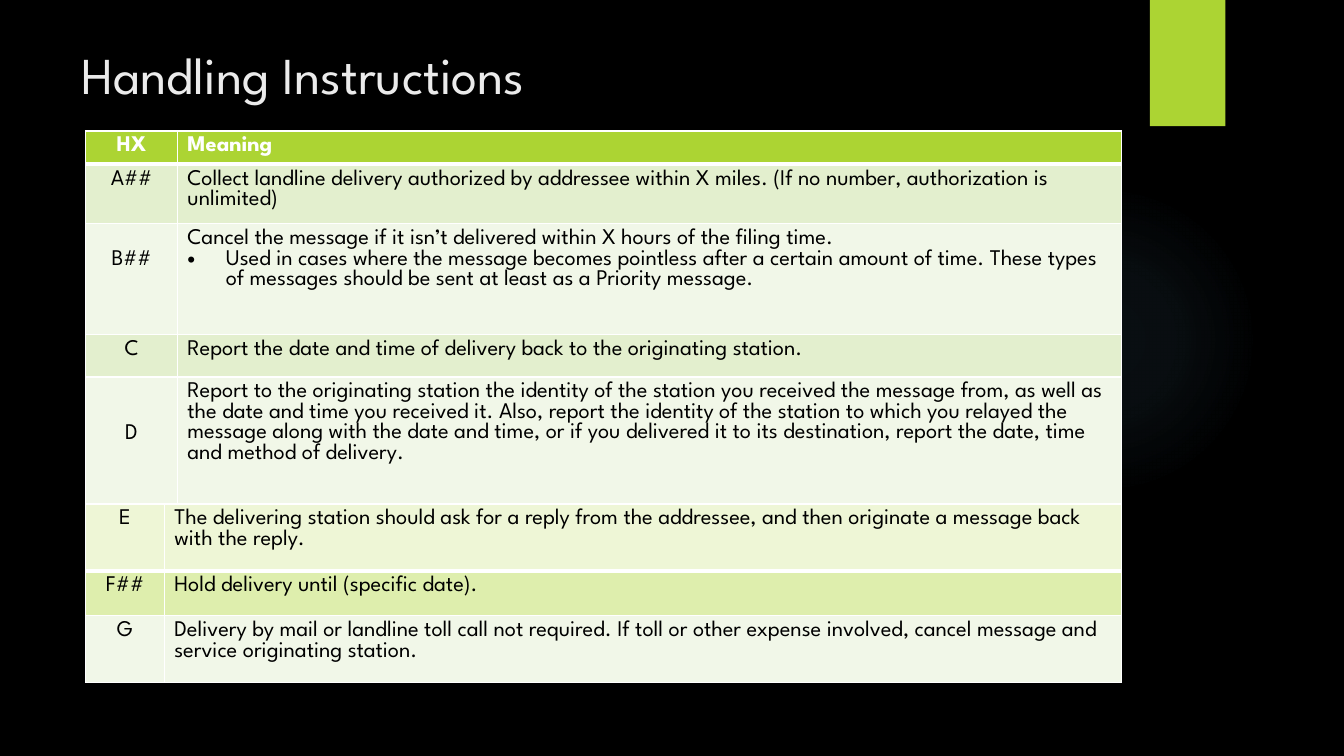
"""Build the Handling Instructions slide: a title, two code tables and green accents."""
from lxml import etree
from pptx import Presentation
from pptx.dml.color import RGBColor
from pptx.enum.shapes import MSO_SHAPE
from pptx.enum.text import MSO_ANCHOR, MSO_AUTO_SIZE, PP_ALIGN
from pptx.oxml import parse_xml
from pptx.oxml.ns import qn
from pptx.util import Cm, Pt

OVAL, RECTANGLE = MSO_SHAPE.OVAL, MSO_SHAPE.RECTANGLE
BOTTOM, NO_FIT = MSO_ANCHOR.BOTTOM, MSO_AUTO_SIZE.NONE
LEFT, CENTER = PP_ALIGN.LEFT, PP_ALIGN.CENTER
DRAWING_NS = "http://schemas.openxmlformats.org/drawingml/2006/main"

THEME = {
    "background": "000000", "accent": "ACD433", "glow": "7AC4F0", "border": "FFFFFF",
    "sage": "E3EFCE", "mist": "F1F7E8", "lemon": "EEF6D6", "lime": "DEEEAD",
    "title": {"name": "League Spartan", "size": Pt(37), "bold": False, "color": "EBEBEB"},
    "header": {"name": "League Spartan", "size": Pt(16), "bold": True, "color": "FFFFFF"},
    "body": {"name": "League Spartan", "size": Pt(16), "bold": False, "color": "000000"},
}
MARGIN_TOP, LINE_HEIGHT, BULLET_INDENT = 0.13, 0.52, 0.97

TABLES = [
    {"top": 3.3, "widths": (2.31, 23.8), "rows": [
        ("HX", ["Meaning"], "accent", 0.84, 0),
        ("A##", ["Collect landline delivery authorized by addressee within X miles. "
                 "(If no number, authorization is unlimited)"], "sage", 1.5, 0),
        ("B##", ["Cancel the message if it isn’t delivered within X hours of the filing time.",
                 "Used in cases where the message becomes pointless after a certain amount of time. "
                 "These types of messages should be sent at least as a Priority message."],
         "mist", 2.79, 1),
        ("C", ["Report the date and time of delivery back to the originating station."],
         "sage", 1.07, 0),
        ("D", ["Report to the originating station the identity of the station you received the "
               "message from, as well as the date and time you received it. Also, report the "
               "identity of the station to which you relayed the message along with the date and "
               "time, or if you delivered it to its destination, report the date, time and method "
               "of delivery."], "mist", 3.43, 2),
    ]},
    {"top": 12.7, "widths": (1.98, 24.13), "rows": [
        ("E", ["The delivering station should ask for a reply from the addressee, and then "
               "originate a message back with the reply."], "lemon", 1.68, 0),
        ("F##", ["Hold delivery until (specific date)."], "lime", 1.14, 0),
        ("G", ["Delivery by mail or landline toll call not required. If toll or other expense "
               "involved, cancel message and service originating station."], "mist", 1.68, 0),
    ]},
]


def write_paragraph(para, text, style, align):
    """Write one run and apply its format values."""
    para.alignment = align
    span = para.add_run()
    span.text = text
    for name, value in THEME[style].items():
        if name == "color":
            span.font.color.rgb = RGBColor.from_string(value)
        else:
            setattr(span.font, name, value)


def add_accent(page, kind, left, top, width, height):
    """Add a shape without line or shadow."""
    shape = page.shapes.add_shape(kind, Cm(left), Cm(top), Cm(width), Cm(height))
    shape.shadow.inherit = False
    shape.line.fill.background()
    return shape


deck = Presentation()
deck.slide_width, deck.slide_height = Cm(33.87), Cm(19.05)
page = deck.slides.add_slide(deck.slide_layouts[5])
page.background.fill.solid()
page.background.fill.fore_color.rgb = RGBColor.from_string(THEME["background"])

glow = add_accent(page, OVAL, 23.9, 4.65, 7.82, 7.82)
stops = "".join(
    f'<a:gs pos="{position * 1000}"><a:srgbClr val="{THEME["glow"]}">'
    f'<a:alpha val="{alpha * 1000}"/></a:srgbClr></a:gs>'
    for position, alpha in ((0, 7), (36, 6), (69, 0), (100, 0)))
glow.element.spPr.insert(2, parse_xml(
    f'<a:gradFill xmlns:a="{DRAWING_NS}"><a:gsLst>{stops}</a:gsLst><a:path path="circle">'
    '<a:fillToRect l="50000" t="50000" r="50000" b="50000"/></a:path></a:gradFill>'))

tab = add_accent(page, RECTANGLE, 28.98, 0, 1.9, 3.18)
tab.fill.solid()
tab.fill.fore_color.rgb = RGBColor.from_string(THEME["accent"])

title = page.shapes.title
title.left, title.top, title.width, title.height = Cm(1.8), Cm(0.84), Cm(15.72), Cm(1.93)
for name, value in {"word_wrap": True, "auto_size": NO_FIT, "vertical_anchor": BOTTOM}.items():
    setattr(title.text_frame, name, value)
write_paragraph(title.text_frame.paragraphs[0], "Handling Instructions", "title", LEFT)

for plan in TABLES:
    rows, widths = plan["rows"], plan["widths"]
    table = page.shapes.add_table(
        len(rows), len(widths), Cm(2.16), Cm(plan["top"]),
        Cm(sum(widths)), Cm(sum(row[3] for row in rows))).table
    for column, width in zip(table.columns, widths):
        column.width = Cm(width)
    for index, (code, meaning, fill, height, lines_down) in enumerate(rows):
        table.rows[index].height = Cm(height)
        style = "header" if code == "HX" else "body"
        edges = {"lnL": 1, "lnR": 1, "lnT": 3 if index == 1 else 1, "lnB": 3 if index == 0 else 1}
        for cell, texts, align in zip(table.rows[index].cells, ([code], meaning), (CENTER, LEFT)):
            drop = lines_down * LINE_HEIGHT if align == CENTER else 0
            cell.margin_top = Cm(MARGIN_TOP + drop)
            properties = cell._tc.get_or_add_tcPr()
            for edge, weight in edges.items():
                line = etree.SubElement(properties, qn(f"a:{edge}"), w=str(Pt(weight)))
                solid = etree.SubElement(line, qn("a:solidFill"))
                etree.SubElement(solid, qn("a:srgbClr"), val=THEME["border"])
            cell.fill.solid()
            cell.fill.fore_color.rgb = RGBColor.from_string(THEME[fill])
            for order, text in enumerate(texts):
                para = cell.text_frame.paragraphs[0] if order == 0 else cell.text_frame.add_paragraph()
                if order > 0:
                    layout = para._p.get_or_add_pPr()
                    layout.set("marL", str(Cm(BULLET_INDENT)))
                    layout.set("indent", str(-Cm(BULLET_INDENT)))
                    etree.SubElement(layout, qn("a:buFont"), typeface="Arial")
                    etree.SubElement(layout, qn("a:buChar"), char="•")
                write_paragraph(para, text, style, align)

deck.save("out.pptx")
